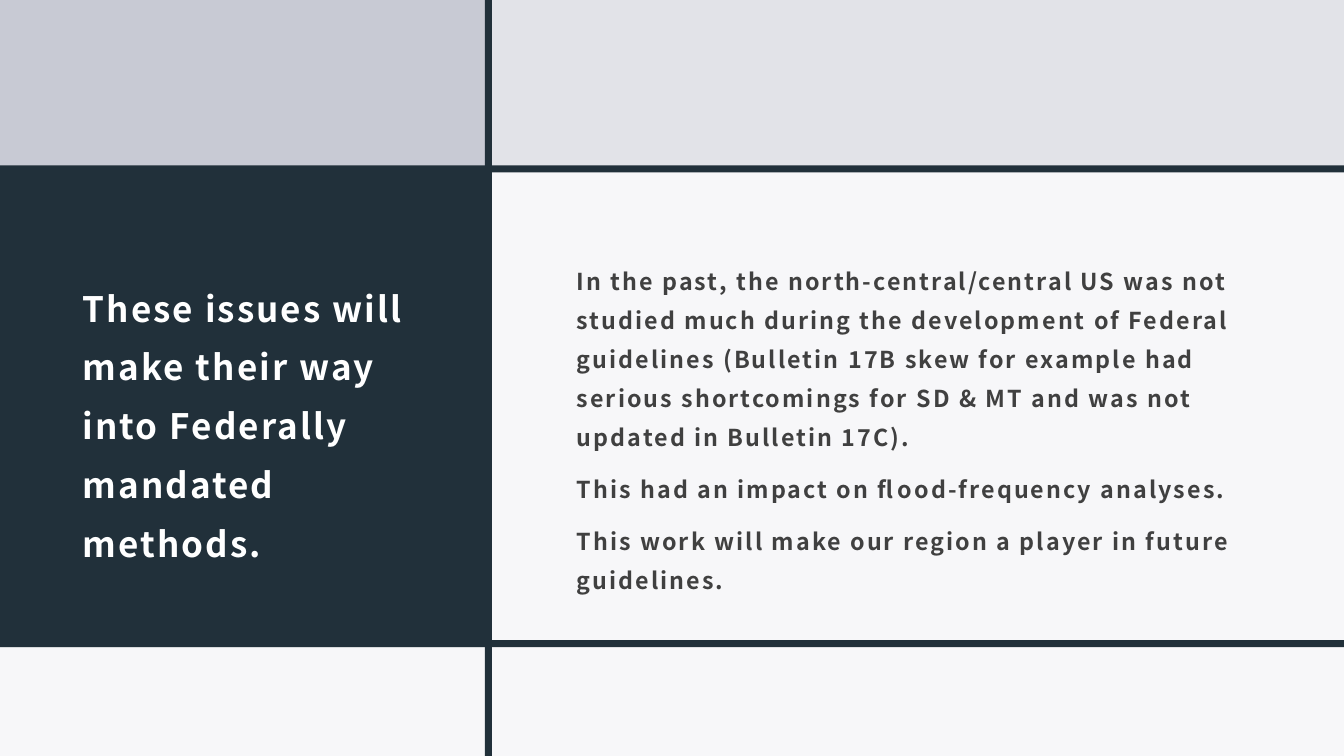
from lxml import etree
from pptx import Presentation
from pptx.dml.color import RGBColor
from pptx.enum.shapes import MSO_SHAPE
from pptx.enum.text import MSO_ANCHOR, MSO_AUTO_SIZE, PP_ALIGN
from pptx.oxml.ns import qn
from pptx.util import Pt

RECT = MSO_SHAPE.RECTANGLE
MIDDLE = MSO_ANCHOR.MIDDLE
FIXED = MSO_AUTO_SIZE.NONE
LEFT = PP_ALIGN.LEFT

PX = 9144
WIDE, HIGH = 1333, 750
BAR = 7
COLORS = {
    "back": "E2E3E8",
    "navy": "21303A",
    "gray": "C8CAD4",
    "white": "FFFFFF",
    "text": "404040",
}
TITLE = "These issues will make their way into Federally mandated methods."
BODY = [
    "In the past, the north-central/central US was not studied much during "
    "the development of Federal guidelines (Bulletin 17B skew for example had "
    "serious shortcomings for SD & MT and was not updated in Bulletin 17C).",
    "This had an impact on flood-frequency analyses.",
    "This work will make our region a player in future guidelines.",
]


class Page:
    font = "Noto Sans CJK JP"
    leading = 1.4
    track = 150

    def __init__(self, slide):
        self.slide = slide
        fill = slide.background.fill
        fill.solid()
        fill.fore_color.rgb = self.color("back")

    def color(self, name):
        return RGBColor.from_string(COLORS[name])

    def block(self, x, y, w, h, color, alpha=100):
        shape = self.slide.shapes.add_shape(RECT, x * PX, y * PX, w * PX, h * PX)
        shape.shadow.inherit = False
        shape.fill.solid()
        shape.fill.fore_color.rgb = self.color(color)
        shape.line.fill.background()
        if alpha < 100:
            tone = shape._element.spPr.find(".//" + qn("a:srgbClr"))
            etree.SubElement(tone, qn("a:alpha"), val=str(alpha * 1000))

    def words(self, holder, x, y, w, h, lines, size, color, gap=0):
        self.slide.shapes._spTree.append(holder._element)
        holder.left, holder.top = x * PX, y * PX
        holder.width, holder.height = w * PX, h * PX
        frame = holder.text_frame
        frame.text = "\n".join(lines)
        frame.word_wrap = True
        frame.auto_size = FIXED
        frame.vertical_anchor = MIDDLE
        frame.margin_left = frame.margin_top = frame.margin_right = 12 * PX
        frame.margin_bottom = 10 * PX
        for i, para in enumerate(frame.paragraphs):
            props = para._p.get_or_add_pPr()
            props.set("marL", "0")
            props.set("indent", "0")
            etree.SubElement(props, qn("a:buNone"))
            para.alignment = LEFT
            para.line_spacing = self.leading
            para.space_before = Pt(gap if i else 0)
            para.space_after = Pt(0)
            for run in para.runs:
                run.font.name = self.font
                run.font.size = Pt(size)
                run.font.bold = True
                run.font.color.rgb = self.color(color)
                run._r.get_or_add_rPr().set("spc", str(self.track))


def main():
    deck = Presentation()
    deck.slide_width, deck.slide_height = WIDE * PX, HIGH * PX
    slide = deck.slides.add_slide(deck.slide_layouts[1])
    title, body = slide.placeholders
    page = Page(slide)

    page.block(0, 0, WIDE, HIGH, "back")
    page.block(0, 164, 484, 478, "navy")
    page.words(title, 70, 214, 373, 398, [TITLE], 25, "white")
    page.block(0, 0, 484, 166, "gray")
    page.block(484, 166, WIDE - 484, 476, "white", 75)
    page.block(0, 164, WIDE, BAR, "navy")
    page.block(0, 641, WIDE, HIGH - 641, "white", 75)
    page.block(0, 635, WIDE, BAR, "navy")
    page.block(481, 0, BAR, HIGH, "navy")
    page.words(body, 560, 214, 703, 413, BODY, 16.6, "text", 9.3)

    deck.save("out.pptx")


if __name__ == "__main__":
    main()
